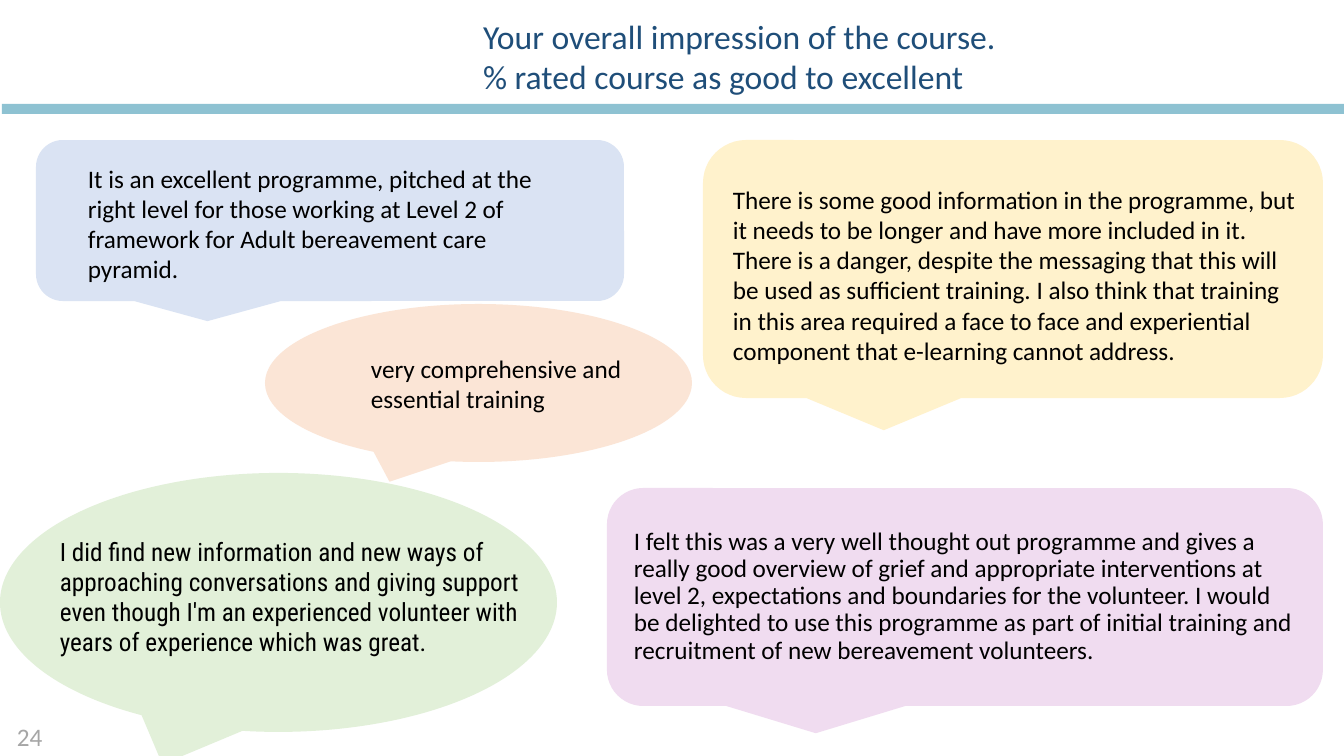
import pptx
import pptx.util
import pptx.dml.color
import pptx.enum.shapes
import pptx.enum.text

RGB = pptx.dml.color.RGBColor
SHAPE = pptx.enum.shapes.MSO_SHAPE
ANCHOR = pptx.enum.text.MSO_ANCHOR
ALIGN = pptx.enum.text.PP_ALIGN
ROUND = SHAPE.ROUNDED_RECTANGULAR_CALLOUT
OVAL = SHAPE.OVAL_CALLOUT

TEAL = RGB(0x8E, 0xC2, 0xD2)
LILAC = RGB(0xF0, 0xDC, 0xF0)
BLUE = RGB(0xDA, 0xE3, 0xF3)
CREAM = RGB(0xFF, 0xF2, 0xCC)
GREEN = RGB(0xE2, 0xF0, 0xD9)
PEACH = RGB(0xFB, 0xE5, 0xD6)
NAVY = RGB(0x1F, 0x4E, 0x79)
BLACK = RGB(0, 0, 0)
GREY = RGB(0xA6, 0xA6, 0xA6)

# Boxes are left, top, width, height in px
WIDE, HIGH = 1344, 756
BAR = (2, 104, 1342, 10)
HEAD_BOX = (473, 11, 672, 92)
HEAD = ["Your overall impression of the course.",
        "% rated course as good to excellent"]
PAGE_BOX = (7, 716, 58, 40)
PAGE = ["24"]

# Callout shape, fill, callout box, text box, paragraphs, text style
QUOTES = [
    (ROUND, LILAC, (607, 488, 716, 218), (624, 556, 683, 81),
     ["I felt this was a very well thought out programme and gives a really "
      "good overview of grief and appropriate interventions at level 2, "
      "expectations and boundaries for the volunteer. I would be delighted "
      "to use this programme as part of initial training and recruitment of "
      "new bereavement volunteers."],
     {"space": 0.9, "anchor": ANCHOR.MIDDLE}),
    (ROUND, BLUE, (36, 140, 588, 161), (78, 158, 504, 132),
     ["It is an excellent programme, pitched at the right level for those "
      "working at Level 2 of framework for Adult bereavement care pyramid."],
     {}),
    (ROUND, CREAM, (703, 140, 620, 258), (723, 179, 585, 194),
     ["There is some good information in the programme, but it needs to be "
      "longer and have more included in it. There is a danger, despite the "
      "messaging that this will be used as sufficient training. I also think "
      "that training in this area required a face to face and experiential "
      "component that e-learning cannot address."],
     {}),
    (OVAL, GREEN, (0, 473, 557, 259), (50, 531, 491, 164),
     ["I did find new information and new ways of approaching conversations "
      "and giving support even though I'm an experienced volunteer with "
      "years of experience which was great."],
     {"font": "Roboto Condensed"}),
    (OVAL, PEACH, (265, 304, 427, 158), (361, 348, 853, 72),
     ["very comprehensive and", "essential training"],
     {}),
]

SCALE = pptx.util.Inches(1) / 100.8


def emu(box):
    return [round(n * SCALE) for n in box]


def draw(slide, kind, box, fill):
    shape = slide.shapes.add_shape(kind, *emu(box))
    shape.shadow.inherit = False
    shape.fill.solid()
    shape.fill.fore_color.rgb = fill
    shape.line.fill.background()


def write(shape, lines, size=18, color=BLACK, font="Calibri", space=1.0,
          anchor=ANCHOR.TOP):
    frame = shape.text_frame
    frame.word_wrap = True
    frame.auto_size = pptx.enum.text.MSO_AUTO_SIZE.NONE
    frame.vertical_anchor = anchor
    for i, line in enumerate(lines):
        para = frame.add_paragraph() if i else frame.paragraphs[0]
        para.alignment = ALIGN.LEFT
        para.line_spacing = space
        para.space_before = pptx.util.Pt(0)
        run = para.add_run()
        run.text = line
        run.font.name = font
        run.font.size = pptx.util.Pt(size)
        run.font.color.rgb = color


def main():
    deck = pptx.Presentation()
    deck.slide_width, deck.slide_height = emu((WIDE, HIGH))
    slide = deck.slides.add_slide(deck.slide_layouts[5])

    title = slide.shapes.title
    title.left, title.top, title.width, title.height = emu(HEAD_BOX)
    write(title, HEAD, size=24, color=NAVY)
    draw(slide, SHAPE.RECTANGLE, BAR, TEAL)

    for kind, fill, box, *_ in QUOTES:
        draw(slide, kind, box, fill)
    for *_, box, lines, style in QUOTES:
        write(slide.shapes.add_textbox(*emu(box)), lines, **style)
    write(slide.shapes.add_textbox(*emu(PAGE_BOX)), PAGE, color=GREY)

    deck.save("out.pptx")


if __name__ == "__main__":
    main()
